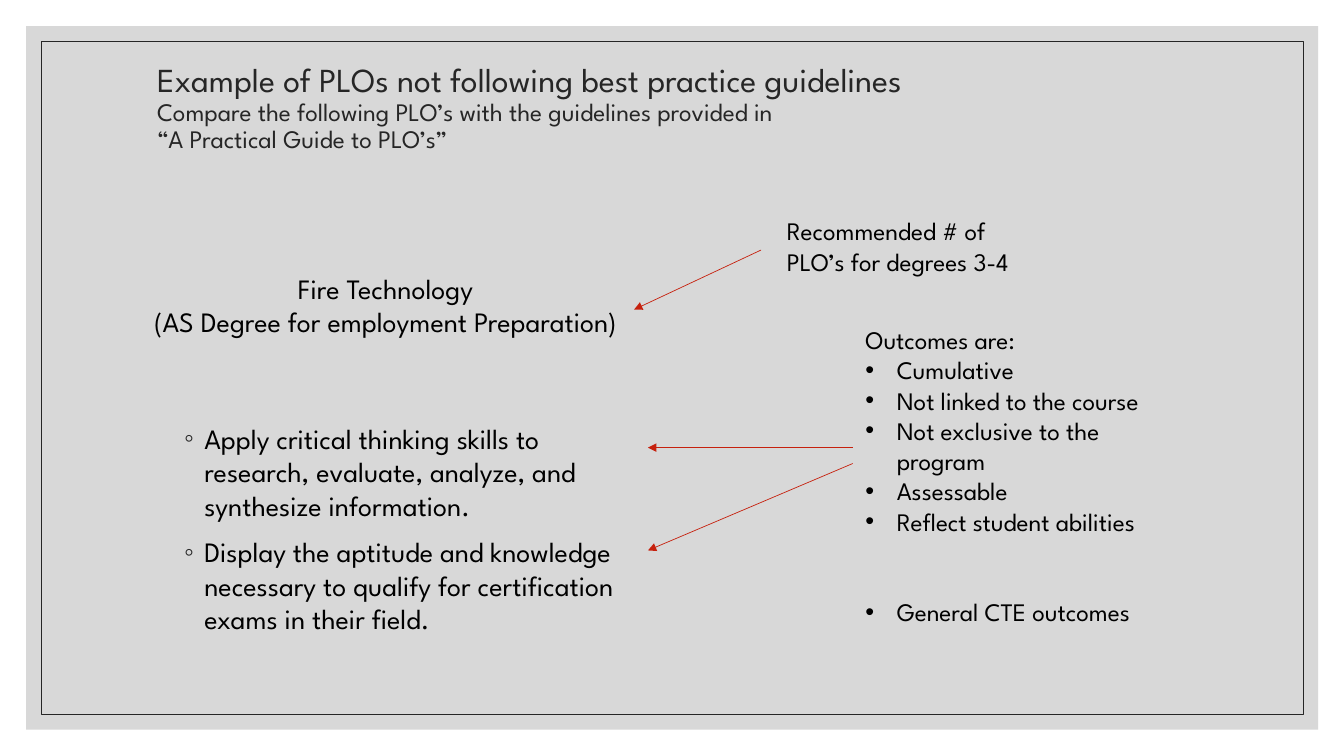
import pptx
import pptx.dml.color
import pptx.enum.shapes
import pptx.enum.text
import pptx.oxml
import pptx.oxml.ns
import pptx.util
from pptx.util import Cm

FONT = "League Spartan"
COLORS = {"panel": "BFBFBF", "dark": "262626", "text": "000000", "arrow": "C6210E"}
ALIGN = pptx.enum.text.PP_ALIGN
ANCHOR = pptx.enum.text.MSO_ANCHOR


def rgb(name):
    return pptx.dml.color.RGBColor.from_string(COLORS[name])


def add_xml(parent, tag, **attrs):
    el = pptx.oxml.parse_xml(f'<a:{tag} {pptx.oxml.ns.nsdecls("a")}/>')
    for key, value in attrs.items():
        el.set(key, str(value))
    parent.append(el)
    return el


def add_frame(slide, left, top, width, height, fill=None, alpha=None, line=None):
    sp = slide.shapes.add_shape(pptx.enum.shapes.MSO_SHAPE.RECTANGLE,
                                Cm(left), Cm(top), Cm(width), Cm(height))
    sp.shadow.inherit = False
    if fill:
        sp.fill.solid()
        sp.fill.fore_color.rgb = rgb(fill)
        color = sp.fill._xPr.find(".//" + pptx.oxml.ns.qn("a:srgbClr"))
        add_xml(color, "alpha", val=alpha * 1000)
    else:
        sp.fill.background()
    if line:
        sp.line.color.rgb = rgb(line)
        sp.line.width = pptx.util.Pt(0.5)
    else:
        sp.line.fill.background()


def add_box(slide, left, top, width, height, anchor=ANCHOR.TOP):
    """Add an empty wrapping text box and return its text frame."""
    tf = slide.shapes.add_textbox(Cm(left), Cm(top), Cm(width), Cm(height)).text_frame
    tf.word_wrap = True
    tf.vertical_anchor = anchor
    return tf


def add_run(p, text, size, color="text"):
    r = p.add_run()
    r.text = text
    r.font.name = FONT
    r.font.size = pptx.util.Pt(size)
    r.font.color.rgb = rgb(color)


def add_text(tf, text, size=18, color="text", align=ALIGN.LEFT, before=0,
             bullet=None, bullet_color="text", indent=0):
    """Append a paragraph, reusing the frame's first one while it is empty."""
    p = tf.paragraphs[0] if not tf.paragraphs[0].runs else tf.add_paragraph()
    p.alignment = align
    p.space_before = pptx.util.Pt(before)
    if bullet:
        pPr = p._p.get_or_add_pPr()
        pPr.set("marL", str(Cm(indent)))
        pPr.set("indent", str(-Cm(indent)))
        add_xml(add_xml(pPr, "buClr"), "srgbClr", val=COLORS[bullet_color])
        add_xml(pPr, "buFont", typeface="Arial")
        add_xml(pPr, "buChar", char=bullet)
    add_run(p, text, size, color)
    return p


def add_arrow(slide, x1, y1, x2, y2):
    line = slide.shapes.add_connector(pptx.enum.shapes.MSO_CONNECTOR.STRAIGHT,
                                      Cm(x1), Cm(y1), Cm(x2), Cm(y2))
    line.line.color.rgb = rgb("arrow")
    line.line.width = pptx.util.Pt(0.5)
    add_xml(line.line._get_or_add_ln(), "tailEnd", type="triangle")
    add_xml(line._element.spPr, "effectLst")


def main():
    prs = pptx.Presentation()
    prs.slide_width, prs.slide_height = Cm(33.87), Cm(19.05)
    slide = prs.slides.add_slide(prs.slide_layouts[6])

    add_frame(slide, 0.66, 0.66, 32.56, 17.73, fill="panel", alpha=60)
    add_frame(slide, 1.04, 1.04, 31.8, 16.97, line="dark")

    title = add_box(slide, 3.71, 1.09, 26.59, 3.3, anchor=ANCHOR.MIDDLE)
    p = add_text(title, "Example of PLOs not following best practice guidelines",
                 size=24, color="dark")
    p.line_spacing = 0.9
    for line in ("Compare the following PLO’s with the guidelines provided in",
                 "“A Practical Guide to PLO’s”"):
        p.add_line_break()
        add_run(p, line, 18, "dark")

    degree = add_box(slide, 3.18, 6.71, 13.08, 3.12)
    for line in ("Fire Technology", "(AS Degree for employment Preparation)"):
        add_text(degree, line, size=20, align=ALIGN.CENTER)

    plos = add_box(slide, 4.39, 10.49, 11.86, 6.76)
    for plo in ("Apply critical thinking skills to research, evaluate, analyze, "
                "and synthesize information.",
                "Display the aptitude and knowledge necessary to qualify for "
                "certification exams in their field."):
        add_text(plos, plo, size=20, before=9, bullet="◦",
                 bullet_color="dark", indent=0.51)

    advice = add_box(slide, 19.58, 5.31, 6.91, 1.8)
    add_text(advice, "Recommended # of PLO’s for degrees 3-4")

    outcomes = add_box(slide, 21.56, 8.05, 8.03, 7.95)
    add_text(outcomes, "Outcomes are:")
    for outcome in ("Cumulative", "Not linked to the course",
                    "Not exclusive to the program", "Assessable",
                    "Reflect student abilities"):
        add_text(outcomes, outcome, bullet="•", indent=0.79)
    add_text(outcomes, "General CTE outcomes", before=43, bullet="•", indent=0.79)

    for ends in ((19.18, 6.3, 15.98, 7.8),
                 (21.49, 11.28, 16.33, 11.28),
                 (21.49, 11.68, 16.33, 13.87)):
        add_arrow(slide, *ends)

    prs.save("out.pptx")


if __name__ == "__main__":
    main()
